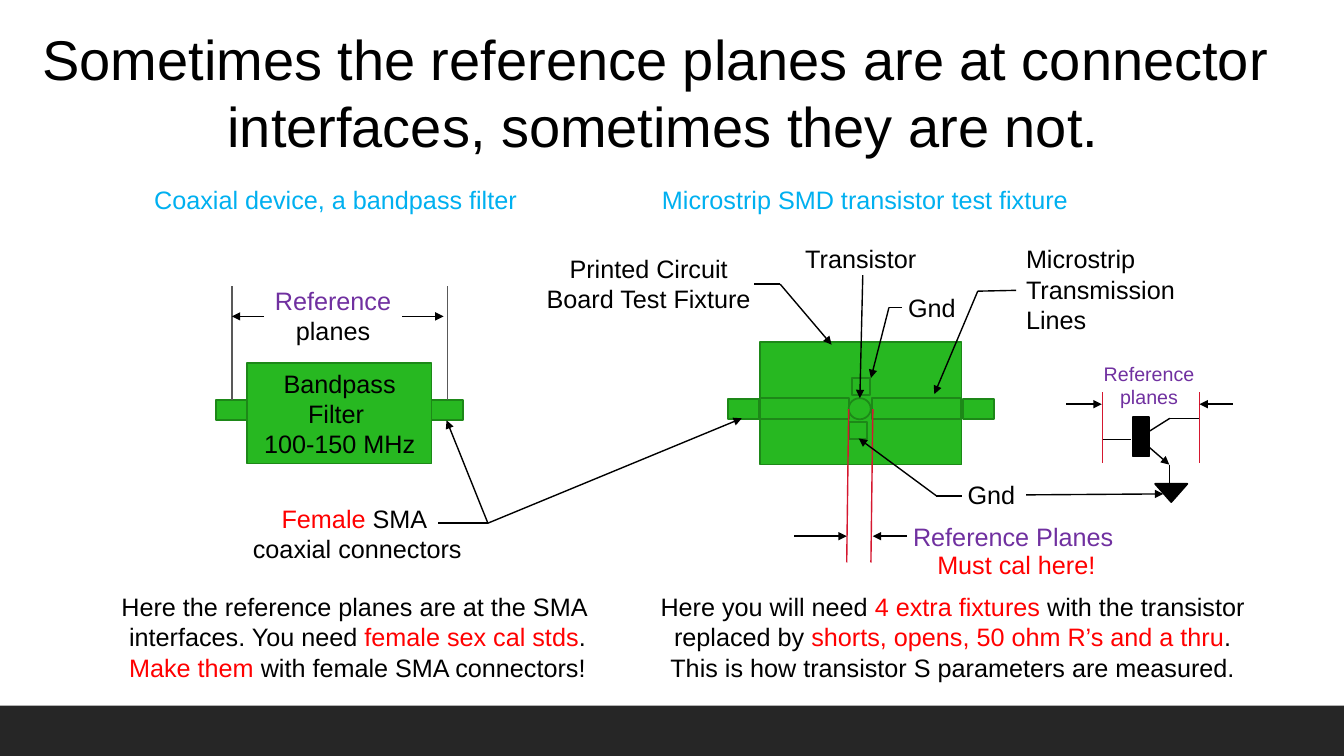
from itertools import pairwise

from lxml.etree import SubElement
from pptx import Presentation
from pptx.dml.color import RGBColor
from pptx.enum.shapes import MSO_CONNECTOR as Connector, MSO_SHAPE as Shape
from pptx.enum.text import MSO_AUTO_SIZE as AutoSize, PP_ALIGN as Align
from pptx.oxml.ns import qn
from pptx.util import Pt

BLACK = RGBColor(0, 0, 0)
CHARCOAL = RGBColor(0x26, 0x26, 0x26)
GRAY = RGBColor(0x59, 0x59, 0x59)
GREEN = RGBColor(0x27, 0xB8, 0x21)
DARK_GREEN = RGBColor(0x1D, 0x88, 0x18)
RED = RGBColor(0xFF, 0, 0)
CRIMSON = RGBColor(0xD5, 0x17, 0x2F)
PURPLE = RGBColor(0x70, 0x30, 0xA0)
SKY = RGBColor(0, 0xB0, 0xF0)


def add_block(slide, left, top, width, height, kind=Shape.RECTANGLE,
              fill=GREEN, outline=DARK_GREEN, rotation=0):
    shape = slide.shapes.add_shape(kind, Pt(left), Pt(top), Pt(width), Pt(height))
    shape.shadow.inherit = False
    shape.rotation = rotation
    shape.fill.solid()
    shape.fill.fore_color.rgb = fill
    if outline is None:
        shape.line.fill.background()
    else:
        shape.line.color.rgb = outline
        shape.line.width = Pt(1.25)


def add_text(slide, left, top, width, height, lines, color=BLACK, size=18,
             align=Align.CENTER, wrap=False):
    box = slide.shapes.add_textbox(Pt(left), Pt(top), Pt(width), Pt(height))
    frame = box.text_frame
    frame.word_wrap = wrap
    frame.auto_size = AutoSize.SHAPE_TO_FIT_TEXT
    for index, line in enumerate(lines):
        paragraph = frame.paragraphs[0] if index == 0 else frame.add_paragraph()
        paragraph.alignment = align
        paragraph.font.name = "Arial"
        paragraph.font.size = Pt(size)
        paragraph.font.color.rgb = color
        parts = [(line, color)] if isinstance(line, str) else line
        for text, part_color in parts:
            run = paragraph.add_run()
            run.text = text
            if part_color != color:
                run.font.color.rgb = part_color


def add_line(slide, points, color=BLACK, arrow=False):
    for start, end in pairwise(points):
        connector = slide.shapes.add_connector(
            Connector.STRAIGHT, *(Pt(length) for length in (*start, *end)))
        connector.line.color.rgb = color
        connector.line.width = Pt(1)
        properties = connector._element.spPr
        if arrow and end == points[-1]:
            SubElement(properties.find(qn("a:ln")), qn("a:tailEnd"), type="triangle")
        SubElement(properties, qn("a:effectLst"))


def add_arrow(slide, *points):
    add_line(slide, points, arrow=True)


def draw_headings(slide):
    add_block(slide, 0, 504, 960, 36, fill=CHARCOAL, outline=None)
    add_text(slide, 18, 13.7, 910.8, 104.4,
             ["Sometimes the reference planes are at connector ",
              "interfaces, sometimes they are not."], size=40)
    add_text(slide, 103, 128.2, 279.4, 28.8,
             ["Coaxial device, a bandpass filter"], SKY, align=Align.LEFT)
    add_text(slide, 465.8, 128.2, 307.4, 28.8,
             ["Microstrip SMD transistor test fixture"], SKY, align=Align.LEFT)


def draw_filter(slide):
    add_block(slide, 176.4, 259.2, 131.8, 72)
    for left in (308.2, 154.1):
        add_block(slide, left, 285.8, 22.3, 14.4)
    add_text(slide, 180.7, 259.2, 123.8, 72.7,
             ["Bandpass", "Filter ", "100-150 MHz"])
    for x in (165.6, 319.7):
        add_line(slide, [(x, 285.8), (x, 204.5)], GRAY)
    add_text(slide, 188.6, 200.2, 98.6, 51.1, [[("Reference", PURPLE)], "planes"])
    add_arrow(slide, (188.6, 226), (165.6, 226))
    add_arrow(slide, (287.3, 226), (316.8, 226))
    add_text(slide, 170.6, 355.7, 169.2, 51.1,
             [[("Female", RED), (" SMA ", BLACK)], "coaxial connectors"])


def draw_fixture(slide):
    add_block(slide, 542.9, 244.1, 144, 87.8)
    for left in (542.9, 622.8):
        add_block(slide, left, 284.4, 63.4, 15.1)
    add_block(slide, 606.2, 284.4, 15.8, 15.1, Shape.OVAL)
    for left, top in ((608.4, 270), (606.2, 301.7)):
        add_block(slide, left, top, 13, 12.2)
    for left in (519.8, 687.6):
        add_block(slide, left, 285.1, 22.3, 14.4)
    for x in (606.2, 623.5):
        add_line(slide, [(x, 292.3), (x - 1.4, 401.8)], CRIMSON)
    add_arrow(slide, (567.4, 383), (604.8, 383))
    add_arrow(slide, (648, 383), (623.5, 383))


def draw_callouts(slide):
    add_text(slide, 382.3, 177.1, 162, 51.1, ["Printed Circuit", "Board Test Fixture"])
    for lines, left, top, width, height, color in (
            (["Microstrip", "Transmission", "Lines"], 725.8, 170.6, 121.7, 72.7, BLACK),
            (["Transistor"], 568.1, 170.6, 94.3, 28.8, BLACK),
            (["Gnd"], 641.5, 205.2, 49, 28.8, BLACK),
            (["Gnd"], 684, 339.1, 49, 28.8, BLACK),
            (["Reference Planes"], 645.1, 368.6, 159.1, 28.8, PURPLE),
            (["Must cal here!"], 662.4, 388.8, 128.9, 28.8, RED)):
        add_text(slide, left, top, width, height, lines, color, align=Align.LEFT)
    add_arrow(slide, (313.2, 373.7), (348.5, 373.7), (319, 300.2))
    add_arrow(slide, (348.5, 373.7), (529.9, 298.8))
    add_arrow(slide, (725.8, 207.4), (698.4, 208), (667.4, 281.5))
    add_arrow(slide, (538.6, 203), (557.3, 203), (594, 246.2))
    add_arrow(slide, (616.3, 196.6), (614.2, 284.4))
    add_arrow(slide, (644.4, 219.6), (635, 219.6), (622.1, 270))
    add_arrow(slide, (686.9, 354.2), (668.9, 354.2), (613.4, 313.2))
    add_arrow(slide, (733, 353.5), (830.9, 352.8))


def draw_transistor_symbol(slide):
    add_block(slide, 809.3, 298.1, 11.5, 28.1, fill=BLACK, outline=BLACK)
    add_arrow(slide, (819.4, 318.2), (835.2, 331.9))
    add_line(slide, [(835.2, 331.9), (835.2, 345.6)])
    add_line(slide, [(815, 311.8), (835.6, 298.8), (856.8, 298.8)])
    add_line(slide, [(787, 313.9), (807.8, 313.9)])
    add_block(slide, 825.1, 345.6, 23, 13, Shape.ISOSCELES_TRIANGLE,
              BLACK, BLACK, rotation=180)
    for x in (787.7, 856.8):
        add_line(slide, [(x, 330.5), (x, 280.1)], CRIMSON)
    add_text(slide, 781.2, 254.9, 79.2, 41, ["Reference", "planes"], PURPLE, 14)
    add_arrow(slide, (761.8, 288.7), (787, 288.7))
    add_arrow(slide, (880.6, 288.7), (856.8, 288.7))


def draw_conclusions(slide):
    add_text(slide, 77.8, 419, 355, 72.7, [
        "Here the reference planes are at the SMA ",
        [("interfaces. You need ", BLACK), ("female sex cal stds", RED), (".", BLACK)],
        [("Make them ", RED), ("with female SMA connectors!", BLACK)]])
    add_text(slide, 461.5, 419, 437.8, 72.7, [
        [("Here you will need ", BLACK), ("4 extra fixtures ", RED),
         ("with the transistor", BLACK)],
        [("replaced by ", BLACK), ("shorts, opens, 50 ohm R’s and a thru", RED),
         (".", BLACK)],
        "This is how transistor S parameters are measured."], wrap=True)


def main():
    presentation = Presentation()
    presentation.slide_width, presentation.slide_height = Pt(960), Pt(540)
    slide = presentation.slides.add_slide(presentation.slide_layouts[6])
    draw_headings(slide)
    draw_filter(slide)
    draw_fixture(slide)
    draw_callouts(slide)
    draw_transistor_symbol(slide)
    draw_conclusions(slide)
    presentation.save("out.pptx")


if __name__ == "__main__":
    main()
